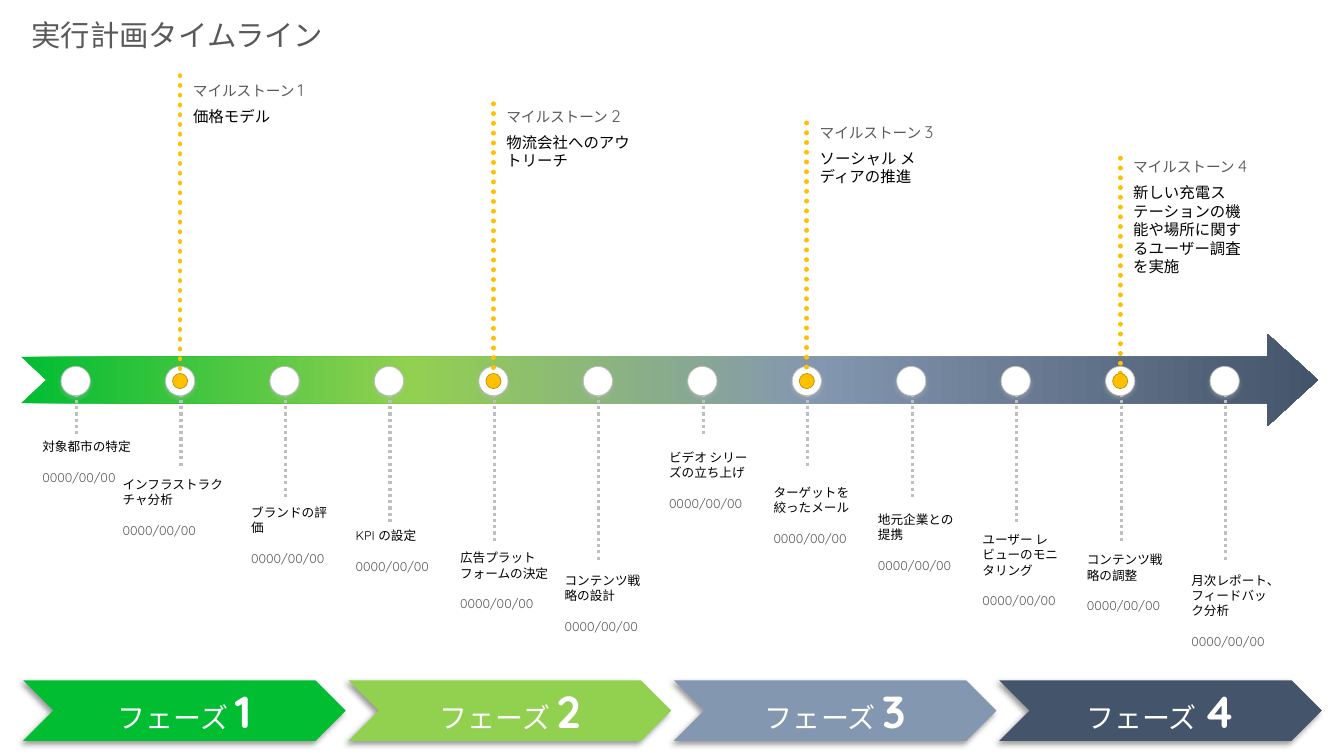
from dataclasses import dataclass
from typing import Any

from lxml.etree import SubElement
from pptx import Presentation
from pptx.dml.color import RGBColor
from pptx.enum.dml import MSO_LINE_DASH_STYLE as Dash
from pptx.enum.shapes import MSO_CONNECTOR_TYPE as ConnectorType, MSO_SHAPE as ShapeType
from pptx.enum.text import MSO_ANCHOR as Anchor, MSO_AUTO_SIZE as AutoSize, PP_ALIGN as Align
from pptx.oxml.ns import qn
from pptx.util import Inches, Pt

FONT = "Quicksand"
GREY, BLACK, WHITE = "595959", "000000", "FFFFFF"
GOLD, SILVER = "FFC000", "BFBFBF"
PHASE_COLOURS = ["00BD32", "92D050", "8497B0", "44546A"]
GRADIENT_POSITIONS = [0, 30, 61, 100]
FIRST_NODE, NODE_STEP, AXIS = 0.75, 1.036, 3.78
STEM_ENDS = [4.33, 4.63, 4.93, 5.18, 5.38, 5.58]


@dataclass
class Task:
    label: str
    top: float
    width: float = 0.8
    shift: float = 0


@dataclass
class Milestone:
    label: str
    line_top: float
    heading_top: float
    width: float
    height: float


@dataclass
class Shadow:
    colour: str
    opacity: int
    blur: float
    distance: float
    angle: int


@dataclass
class Run:
    text: str
    size: float
    colour: str
    bold: bool = False


TASKS = [
    Task("対象都市の特定", 4.31, 1.04),
    Task("インフラストラクチャ分析", 4.68, 1.13, -0.24),
    Task("ブランドの評価", 4.96),
    Task("KPI の設定", 5.19),
    Task("広告プラットフォームの決定", 5.41, 0.9),
    Task("コンテンツ戦略の設計", 5.63),
    Task("ビデオ シリーズの立ち上げ", 4.41),
    Task("ターゲットを絞ったメール", 4.76),
    Task("地元企業との提携", 5.03),
    Task("ユーザー レビューのモニタリング", 5.23),
    Task("コンテンツ戦略の調整", 5.43),
    Task("月次レポート、フィードバック分析", 5.63),
]
MILESTONES = [
    Milestone("価格モデル", 0.75, 0.74, 1.48, 2.5),
    Milestone("物流会社へのアウトリーチ", 1.03, 1, 1.46, 2.44),
    Milestone("ソーシャル メディアの推進", 1.22, 1.16, 1.37, 2.05),
    Milestone("新しい充電ステーションの機能や場所に関するユーザー調査を実施", 1.57, 1.5, 1.37, 1.73),
]
PHASE_SHADOW = Shadow("000000", 40, 4, 3, 135)
NODE_SHADOW = Shadow(SILVER, 35, 3.1, 1.8, 90)
TASK_FRAME = {"margin_left": 0, "margin_right": 0, "margin_top": Inches(0.05), "margin_bottom": Inches(0.01)}


def rgb(colour: str) -> RGBColor:
    return RGBColor.from_string(colour)


def apply_format(target: Any, values: dict[str, Any]) -> None:
    for name, value in values.items():
        setattr(target, name, value)


def node_x(index: int) -> float:
    return FIRST_NODE + index * NODE_STEP


def add_runs(paragraph: Any, runs: list[Run]) -> None:
    for item in runs:
        run = paragraph.add_run()
        run.text = item.text
        apply_format(run.font, {"name": FONT, "size": Pt(item.size), "bold": item.bold})
        run.font.color.rgb = rgb(item.colour)


def add_text(shapes: Any, box: tuple, runs: list[Run], frame_format: dict[str, Any]) -> Any:
    frame = shapes.add_textbox(*map(Inches, box)).text_frame
    apply_format(frame, {"word_wrap": True, **frame_format})
    add_runs(frame.paragraphs[0], runs)
    return frame


def add_shadow(shape: Any, shadow: Shadow) -> None:
    effects = shape._element.spPr.find(qn("a:effectLst"))
    outer = SubElement(effects, qn("a:outerShdw"), blurRad=str(Pt(shadow.blur)), dist=str(Pt(shadow.distance)),
                       dir=str(shadow.angle * 60000), algn="ctr", rotWithShape="0")
    colour = SubElement(outer, qn("a:srgbClr"), val=shadow.colour)
    SubElement(colour, qn("a:alpha"), val=str(shadow.opacity * 1000))


def add_shape(shapes: Any, kind: ShapeType, box: tuple, fill: str, line: str | None = None,
              shadow: Shadow | None = None) -> Any:
    shape = shapes.add_shape(kind, *map(Inches, box))
    shape.shadow.inherit = False
    shape.fill.solid()
    shape.fill.fore_color.rgb = rgb(fill)
    if line:
        shape.line.color.rgb = rgb(line)
        shape.line.width = Pt(0.5)
    else:
        shape.line.fill.background()
    if shadow:
        add_shadow(shape, shadow)
    return shape


def add_circle(shapes: Any, x: float, diameter: float, fill: str, line: str, shadow: Shadow | None = None) -> None:
    box = (x - diameter / 2, AXIS - diameter / 2, diameter, diameter)
    add_shape(shapes, ShapeType.OVAL, box, fill, line, shadow)


def add_dotted_line(shapes: Any, x: float, top: float, bottom: float, colour: str, width: float, cap: str) -> None:
    connector = shapes.add_connector(ConnectorType.STRAIGHT, *map(Inches, (x, top, x, bottom)))
    connector.line.color.rgb = rgb(colour)
    apply_format(connector.line, {"width": Pt(width), "dash_style": Dash.ROUND_DOT})
    properties = connector._element.spPr
    properties.find(qn("a:ln")).set("cap", cap)
    SubElement(properties, qn("a:effectLst"))


def add_title(slide: Any) -> None:
    title = slide.shapes.title
    apply_format(title, {"left": Inches(0.21), "top": Inches(0.12), "width": Inches(9.2), "height": Inches(0.45)})
    frame = title.text_frame
    apply_format(frame, {"word_wrap": True, "auto_size": AutoSize.SHAPE_TO_FIT_TEXT, "vertical_anchor": Anchor.TOP})
    frame.paragraphs[0].alignment = Align.LEFT
    add_runs(frame.paragraphs[0], [Run("実行計画タイムライン", 21, GREY)])


def add_phase(shapes: Any, index: int, colour: str) -> None:
    box = (0.23 + index * 3.227, 6.75, 3.2, 0.6)
    frame = add_shape(shapes, ShapeType.CHEVRON, box, colour, shadow=PHASE_SHADOW).text_frame
    frame.vertical_anchor = Anchor.MIDDLE
    frame.paragraphs[0].alignment = Align.CENTER
    add_runs(frame.paragraphs[0], [Run("フェーズ ", 20, WHITE), Run(str(index + 1), 32, WHITE, True)])


def add_arrow(shapes: Any) -> None:
    arrow = add_shape(shapes, ShapeType.NOTCHED_RIGHT_ARROW, (0.21, 3.31, 12.86, 0.92), WHITE)
    arrow.adjustments[0], arrow.adjustments[1] = 0.5, 0.545
    arrow.fill.gradient()
    arrow.fill.gradient_angle = 0
    stops = arrow._element.spPr.find(qn("a:gradFill")).find(qn("a:gsLst"))
    for stop in list(stops):
        stops.remove(stop)
    for position, colour in zip(GRADIENT_POSITIONS, PHASE_COLOURS):
        stop = SubElement(stops, qn("a:gs"), pos=str(position * 1000))
        SubElement(stop, qn("a:srgbClr"), val=colour)


def add_task(shapes: Any, index: int, task: Task) -> None:
    box = (node_x(index) - 0.33 + task.shift, task.top, task.width, 0.9)
    frame = add_text(shapes, box, [Run(task.label, 9, BLACK)], TASK_FRAME)
    date = frame.add_paragraph()
    date.space_before = Pt(11.25)
    add_runs(date, [Run("0000/00/00", 9, GREY)])


def add_milestone(shapes: Any, index: int, milestone: Milestone) -> None:
    group = shapes.add_group_shape().shapes
    x = node_x(3 * index + 1)
    add_dotted_line(group, x, milestone.line_top, 3.76, GOLD, 3.5, "rnd")
    add_circle(group, x, 0.15, GOLD, "BF9000")
    heading = [Run("マイルストーン ", 10.5, GREY), Run(str(index + 1), 12, GREY)]
    add_text(group, (x + 0.03, milestone.heading_top, 1.5, 0.26), heading, {})
    body_box = (x + 0.03, milestone.heading_top + 0.27, milestone.width, milestone.height)
    add_text(group, body_box, [Run(milestone.label, 11, BLACK)], {})


def main() -> None:
    presentation = Presentation()
    apply_format(presentation, {"slide_width": Inches(13.33), "slide_height": Inches(7.5)})
    slide = presentation.slides.add_slide(presentation.slide_layouts[5])
    shapes = slide.shapes
    add_title(slide)
    for index, colour in enumerate(PHASE_COLOURS):
        add_phase(shapes, index, colour)
    add_arrow(shapes)
    for index, task in enumerate(TASKS):
        add_dotted_line(shapes, node_x(index) + 0.01, AXIS, STEM_ENDS[index % 6], SILVER, 2.25, "flat")
        add_circle(shapes, node_x(index), 0.29, WHITE, SILVER, NODE_SHADOW)
        add_task(shapes, index, task)
    for index, milestone in enumerate(MILESTONES):
        add_milestone(shapes, index, milestone)
    presentation.save("out.pptx")


if __name__ == "__main__":
    main()
